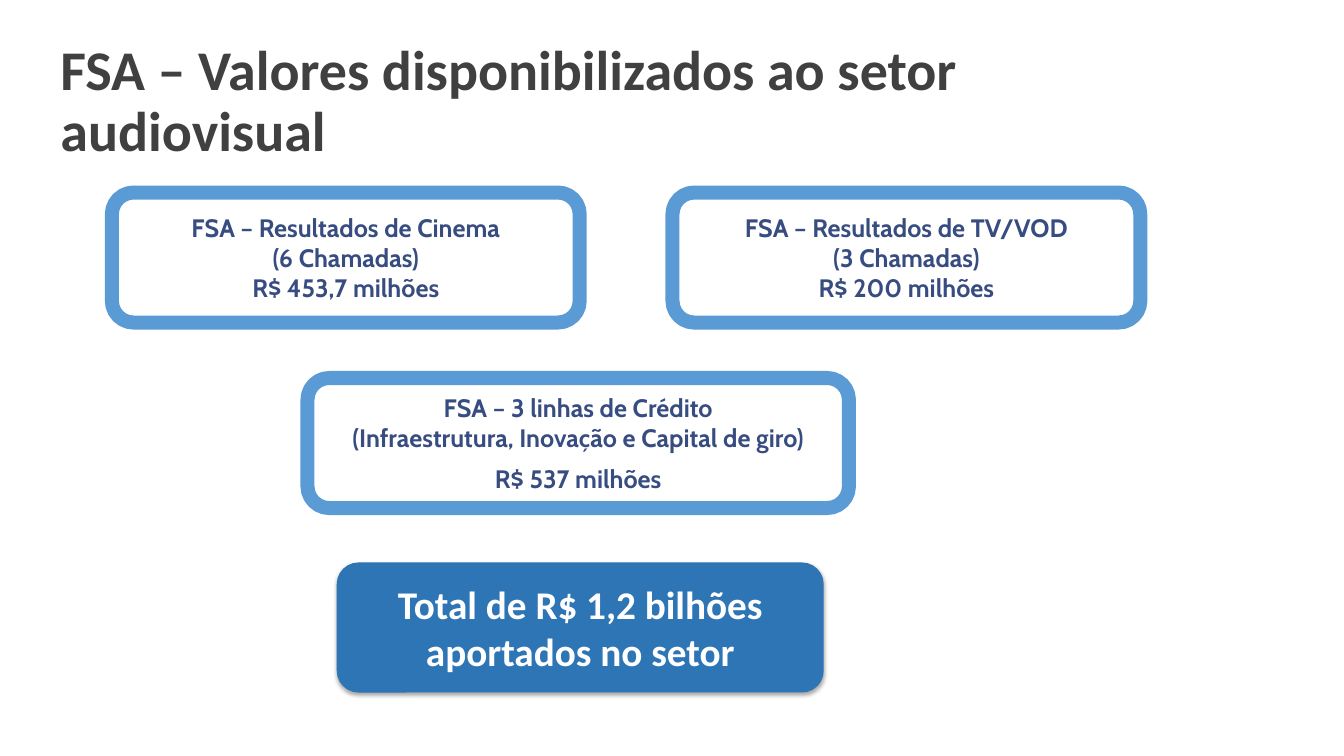
import pptx
import pptx.util
import pptx.dml.color
import pptx.enum.shapes
import pptx.enum.text
import lxml.etree

PX = 9144
theme = {
    "head": "404040", "edge": "5B9BD5", "ink": "374C80",
    "fill": "2E75B6", "white": "FFFFFF", "shade": "000000",
    "sans": "Calibri", "soft": "Cabin",
    "big": 40, "mid": 28, "small": 18, "rim": 10,
}
align = pptx.enum.text.PP_ALIGN


def hue(name):
    return pptx.dml.color.RGBColor.from_string(theme[name])


def write(shape, parts, font="soft", size="small", color="ink",
          side=align.CENTER, after=8, line=None):
    frame = shape.text_frame
    frame.word_wrap = True
    frame.vertical_anchor = pptx.enum.text.MSO_ANCHOR.MIDDLE
    for i, part in enumerate(parts):
        para = frame.add_paragraph() if i else frame.paragraphs[0]
        para.text = part
        para.alignment = side
        para.space_before = pptx.util.Pt(0)
        para.space_after = pptx.util.Pt(after)
        para.line_spacing = line
        for run in para.runs:
            run.font.name = theme[font]
            run.font.size = pptx.util.Pt(theme[size])
            run.font.bold = True
            run.font.color.rgb = hue(color)


deck = pptx.Presentation()
deck.slide_width, deck.slide_height = 1333 * PX, 750 * PX
slide = deck.slides.add_slide(deck.slide_layouts[5])

title = slide.shapes.title
title.left, title.top = 60 * PX, 32 * PX
title.width, title.height = 1114 * PX, 140 * PX
frame = title.text_frame
frame.margin_left = frame.margin_right = 0
frame.margin_top = frame.margin_bottom = 0
write(title, ["FSA – Valores disponibilizados ao setor audiovisual"],
      font="sans", size="big", color="head", side=align.LEFT, after=0, line=0.9)
frame.auto_size = pptx.enum.text.MSO_AUTO_SIZE.NONE

tall = 129
cards = [
    (111, 191, 464, ["FSA – Resultados de Cinema\n(6 Chamadas)\nR$ 453,7 milhões"]),
    (667, 191, 464, ["FSA – Resultados de TV/VOD\n(3 Chamadas)\nR$ 200 milhões"]),
    (305, 375, 537, ["FSA – 3 linhas de Crédito\n(Infraestrutura, Inovação e Capital de giro)",
                     "R$ 537 milhões"]),
    (334, 558, 483, ["Total de R$ 1,2 bilhões aportados no setor"]),
]
for left, top, wide, parts in cards:
    card = slide.shapes.add_shape(
        pptx.enum.shapes.MSO_SHAPE.ROUNDED_RECTANGLE,
        left * PX, top * PX, wide * PX, tall * PX)
    card.shadow.inherit = False
    if parts is not cards[-1][-1]:
        card.fill.background()
        card.line.color.rgb = hue("edge")
        card.line.width = pptx.util.Pt(theme["rim"])
        write(card, parts)
    else:
        card.fill.solid()
        card.fill.fore_color.rgb = hue("fill")
        card.line.fill.background()
        write(card, parts, font="sans", size="mid", color="white", after=6)
        total = card

ns = "{http://schemas.openxmlformats.org/drawingml/2006/main}"
glow = lxml.etree.SubElement(
    total.element.spPr.find(ns + "effectLst"), ns + "outerShdw",
    blurRad=str(pptx.util.Pt(3.1)), dist=str(pptx.util.Pt(1.8)),
    dir="5400000", rotWithShape="0")
tint = lxml.etree.SubElement(glow, ns + "srgbClr", val=theme["shade"])
lxml.etree.SubElement(tint, ns + "alpha", val="35000")

deck.save("out.pptx")
